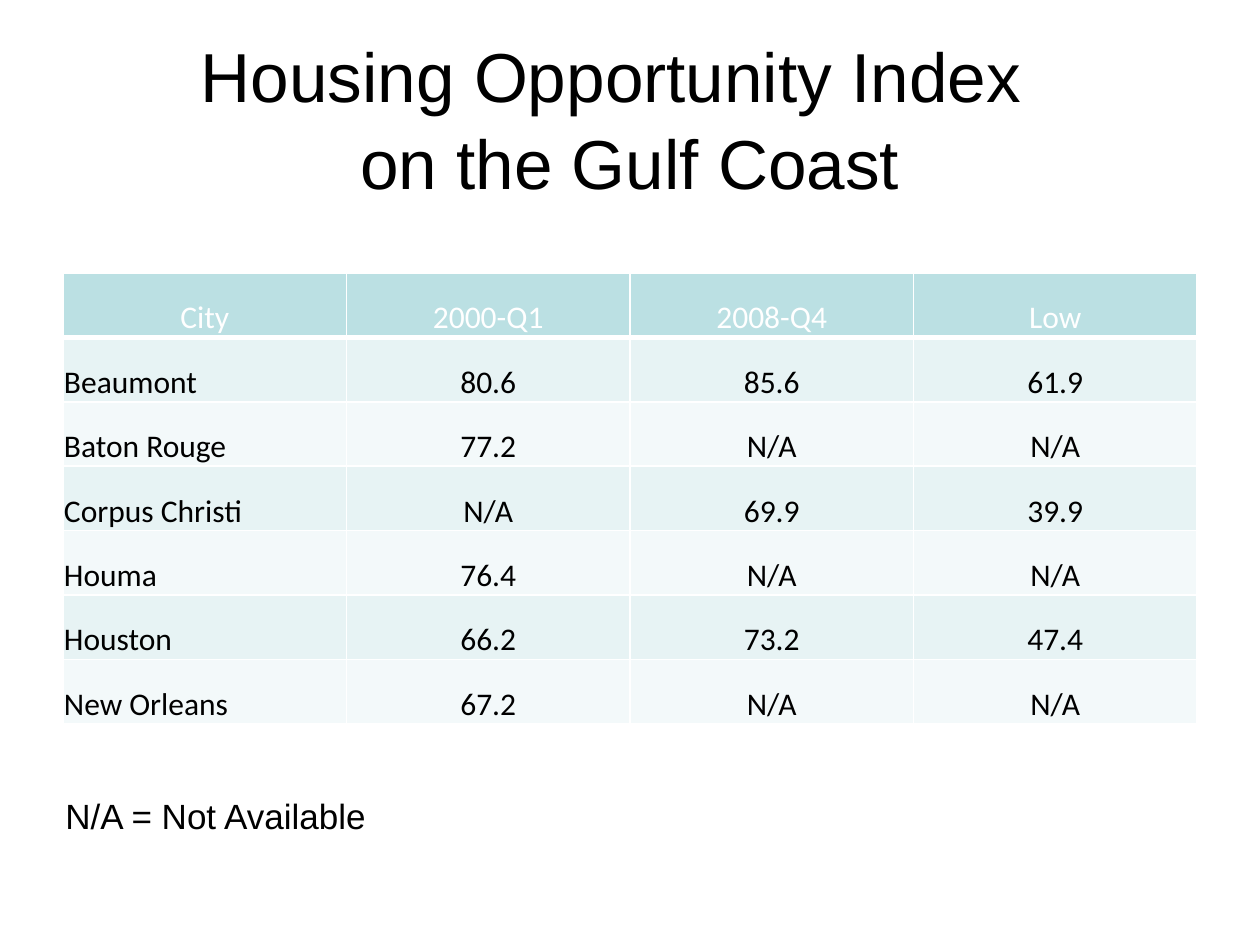
"""Build the Gulf Coast housing opportunity slide."""
from dataclasses import dataclass

import lxml.etree
import pptx
import pptx.dml.color
import pptx.enum.text
import pptx.oxml.ns
import pptx.util

PX_PER_INCH = 126


@dataclass(frozen=True)
class Theme:
    """Colours, fonts and type sizes of the slide."""
    text: str = "000000"
    light: str = "FFFFFF"
    header: str = "BBE0E3"
    bands: tuple[str, str] = ("E7F3F4", "F3F9FA")
    heading_font: str = "Arial"
    table_font: str = "Calibri"
    title_size: float = 39.6
    note_size: float = 20
    table_size: float = 18
    thin_line: int = 1
    thick_line: int = 3


@dataclass(frozen=True)
class Box:
    """A rectangle in px."""
    left: int
    top: int
    width: int
    height: int

    def emu(self) -> tuple[int, int, int, int]:
        """Return the rectangle in EMU."""
        return px(self.left), px(self.top), px(self.width), px(self.height)


@dataclass(frozen=True)
class CityIndex:
    """One city's housing index values."""
    city: str
    early: str
    late: str
    low: str

    def values(self) -> tuple[str, str, str, str]:
        """Return the texts of the row in column order."""
        return self.city, self.early, self.late, self.low


THEME = Theme()
ALIGN = pptx.enum.text.PP_ALIGN
ANCHOR = pptx.enum.text.MSO_ANCHOR
TITLE_BOX = Box(63, 38, 1134, 157)
TABLE_BOX = Box(63, 273, 1134, 451)
NOTE_BOX = Box(53, 788, 388, 50)
TITLE_HANG = 38
TITLE_INSET = 13
HEADER = CityIndex("City", "2000-Q1", "2008-Q4", "Low")
CITIES = (
    CityIndex("Beaumont", "80.6", "85.6", "61.9"),
    CityIndex("Baton Rouge", "77.2", "N/A", "N/A"),
    CityIndex("Corpus Christi", "N/A", "69.9", "39.9"),
    CityIndex("Houma", "76.4", "N/A", "N/A"),
    CityIndex("Houston", "66.2", "73.2", "47.4"),
    CityIndex("New Orleans", "67.2", "N/A", "N/A"),
)


def px(length: int) -> int:
    """Turn px into EMU."""
    return round(length * 914400 / PX_PER_INCH)


def style_paragraph(paragraph, font: str, size: float, colour: str, align) -> None:
    """Set the type and alignment of a paragraph."""
    paragraph.font.name = font
    paragraph.font.size = pptx.util.Pt(size)
    paragraph.font.color.rgb = pptx.dml.color.RGBColor.from_string(colour)
    paragraph.alignment = align


def add_border(cell, side: str, width: int) -> None:
    """Draw one light border of a cell."""
    qn = pptx.oxml.ns.qn
    properties = cell._tc.get_or_add_tcPr()
    line = lxml.etree.SubElement(properties, qn(f"a:ln{side}"), w=str(pptx.util.Pt(width)))
    fill = lxml.etree.SubElement(line, qn("a:solidFill"))
    lxml.etree.SubElement(fill, qn("a:srgbClr"), val=THEME.light)


def draw_title(slide) -> None:
    """Place the title, its second line hanging to the right."""
    title = slide.shapes.title
    title.left, title.top, title.width, title.height = TITLE_BOX.emu()
    frame = title.text_frame
    frame.text = "Housing Opportunity Index\von the Gulf Coast"
    frame.auto_size = pptx.enum.text.MSO_AUTO_SIZE.NONE
    frame.vertical_anchor = ANCHOR.MIDDLE
    frame.margin_left = px(TITLE_INSET)
    frame.margin_right = px(TITLE_INSET + TITLE_HANG)
    paragraph = frame.paragraphs[0]
    style_paragraph(paragraph, THEME.heading_font, THEME.title_size, THEME.text, ALIGN.CENTER)
    paragraph.line_spacing = 1.04
    properties = paragraph._p.get_or_add_pPr()
    properties.set("marL", str(px(TITLE_HANG)))
    properties.set("indent", str(-px(TITLE_HANG)))


def draw_cell(cell, text: str, row: int, column: int) -> None:
    """Fill and format one table cell."""
    is_header = row == 0
    cell.text = text
    cell.vertical_anchor = ANCHOR.BOTTOM
    cell.margin_left = cell.margin_right = cell.margin_top = px(1)
    cell.margin_bottom = 0
    style_paragraph(
        cell.text_frame.paragraphs[0],
        THEME.table_font,
        THEME.table_size,
        THEME.light if is_header else THEME.text,
        ALIGN.CENTER if is_header or column else ALIGN.LEFT,
    )
    for side in "LRTB":
        under_header = (row, side) in ((0, "B"), (1, "T"))
        add_border(cell, side, THEME.thick_line if under_header else THEME.thin_line)
    colour = THEME.header if is_header else THEME.bands[(row - 1) % 2]
    cell.fill.solid()
    cell.fill.fore_color.rgb = pptx.dml.color.RGBColor.from_string(colour)


def draw_table(slide) -> None:
    """Draw the index table with equal rows and columns."""
    rows = (HEADER, *CITIES)
    table = slide.shapes.add_table(len(rows), len(HEADER.values()), *TABLE_BOX.emu()).table
    table.first_row = table.horz_banding = False
    for row, record in enumerate(rows):
        for column, text in enumerate(record.values()):
            draw_cell(table.cell(row, column), text, row, column)


def draw_note(slide) -> None:
    """Add the note below the table."""
    frame = slide.shapes.add_textbox(*NOTE_BOX.emu()).text_frame
    frame.word_wrap = True
    frame.text = "N/A = Not Available"
    style_paragraph(
        frame.paragraphs[0], THEME.heading_font, THEME.note_size, THEME.text, ALIGN.LEFT
    )


def main() -> None:
    """Build and save the presentation."""
    presentation = pptx.Presentation()
    presentation.slide_width = px(1260)
    presentation.slide_height = px(945)
    slide = presentation.slides.add_slide(presentation.slide_layouts[5])
    draw_title(slide)
    draw_table(slide)
    draw_note(slide)
    presentation.save("out.pptx")


if __name__ == "__main__":
    main()
